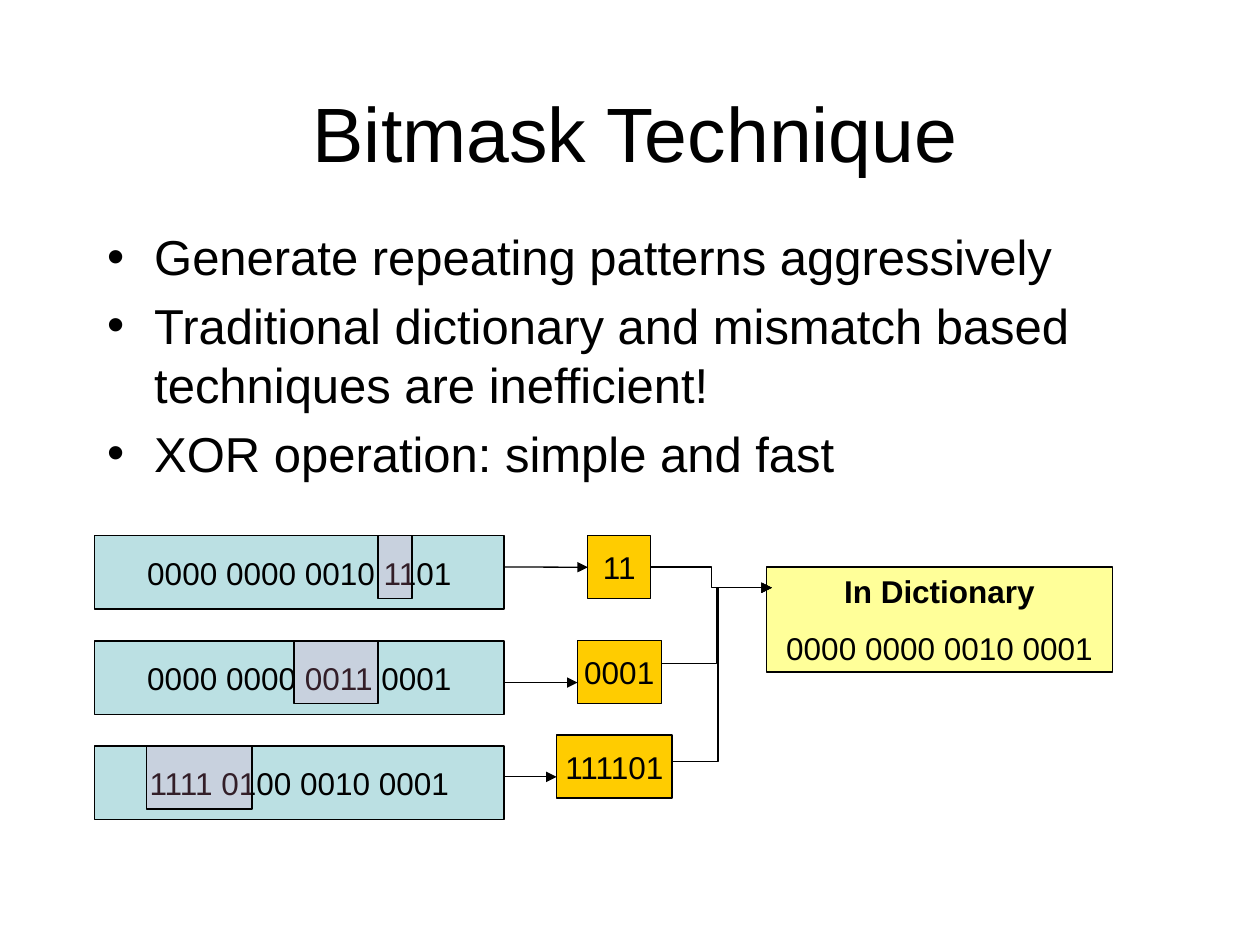
from lxml.etree import SubElement
from pptx import Presentation
from pptx.dml.color import RGBColor
from pptx.enum.shapes import MSO_CONNECTOR as Link, MSO_SHAPE as Preset
from pptx.enum.text import MSO_ANCHOR as Anchor, PP_ALIGN as Align
from pptx.oxml.ns import qn
from pptx.util import Cm, Pt

BLACK = RGBColor(0x00, 0x00, 0x00)
WORD_BLUE = RGBColor(0xBB, 0xE0, 0xE3)
MASK_PINK = RGBColor(0xFF, 0x99, 0xCC)
VALUE_GOLD = RGBColor(0xFF, 0xCC, 0x00)
DICTIONARY_YELLOW = RGBColor(0xFF, 0xFF, 0x99)

LEFT = 1.91
TOP = 10.8
ROW_PITCH = 2.12
WORD_WIDTH = 8.25
MASK_HEIGHT = 1.27
ENTRY_X, ENTRY_Y = 15.56, 11.85

BULLETS = [
    "Generate repeating patterns aggressively",
    "Traditional dictionary and mismatch based techniques are inefficient!",
    "XOR operation: simple and fast",
]

# word, mask left and width, value, value left, top and width, arrow y, exit y, bend
ROWS = [
    ("0000 0000 0010 1101", 7.62, 0.69, "11", 11.85, 10.8, 1.27, 11.43, 11.43, 50000),
    ("0000 0000 0011 0001", 5.93, 1.69, "0001", 11.64, 12.91, 1.69, 13.76, 13.38, 50000),
    ("1111 0100 0010 0001", 2.96, 2.12, "111101", 11.22, 14.82, 2.33, 15.66, 15.35, 46100),
]


def set_font(para, size, bold=False):
    para.font.name = "Arial"
    para.font.size = Pt(size)
    para.font.bold = bold
    para.font.color.rgb = BLACK


def place(shape, left, top, width, height):
    shape.left, shape.top = Cm(left), Cm(top)
    shape.width, shape.height = Cm(width), Cm(height)


def add_title(page, text):
    title = page.shapes.title
    place(title, LEFT, 0.85, 21.8, 3.6)
    title.text_frame.text = text
    title.text_frame.vertical_anchor = Anchor.MIDDLE
    para = title.text_frame.paragraphs[0]
    para.alignment = Align.CENTER
    set_font(para, 44)


def add_bullets(page, lines):
    box = page.shapes.add_textbox(Cm(LEFT), Cm(4.45), Cm(21.8), Cm(13.55))
    frame = box.text_frame
    frame.word_wrap = True
    frame.text = "\n".join(lines)
    for para in frame.paragraphs:
        set_font(para, 28)
        para.space_before = Pt(5.6)
        props = para._p.get_or_add_pPr()
        props.set("marL", str(Cm(0.95)))
        props.set("indent", str(Cm(-0.95)))
        SubElement(props, qn("a:buFont"), typeface="Arial")
        SubElement(props, qn("a:buChar"), char="•")


def add_box(page, left, top, width, height, color, text=""):
    box = page.shapes.add_shape(
        Preset.RECTANGLE, Cm(left), Cm(top), Cm(width), Cm(height))
    box.shadow.inherit = False
    box.fill.solid()
    box.fill.fore_color.rgb = color
    box.line.color.rgb = BLACK
    box.line.width = Pt(0.75)
    frame = box.text_frame
    frame.word_wrap = False
    frame.vertical_anchor = Anchor.MIDDLE
    frame.text = text
    for para in frame.paragraphs:
        para.alignment = Align.CENTER
        set_font(para, 18)
    return box


def add_mask(page, left, top, width):
    mask = add_box(page, left, top, width, MASK_HEIGHT, MASK_PINK)
    color = mask._element.spPr.find(qn("a:solidFill"))[0]
    SubElement(color, qn("a:alpha"), val="20000")


def add_dictionary(page):
    box = add_box(page, 15.45, 11.43, 6.98, 2.12, DICTIONARY_YELLOW,
                  "In Dictionary\n0000 0000 0010 0001")
    heading, entry = box.text_frame.paragraphs
    heading.font.bold = True
    entry.space_before = Pt(11)


def add_arrow(page, kind, start, end):
    arrow = page.shapes.add_connector(kind, *map(Cm, start + end))
    arrow.line.color.rgb = BLACK
    arrow.line.width = Pt(0.75)
    SubElement(arrow.line._get_or_add_ln(), qn("a:tailEnd"), type="triangle")
    SubElement(arrow._element.spPr, qn("a:effectLst"))
    return arrow


def set_bend(arrow, bend):
    guides = arrow._element.spPr.find(qn("a:prstGeom")).get_or_add_avLst()
    SubElement(guides, qn("a:gd"), name="adj1", fmla=f"val {bend}")


def add_row(page, index, row):
    (word, mask_left, mask_width, value, value_left, value_top, value_width,
     arrow_y, exit_y, bend) = row
    top = TOP + index * ROW_PITCH
    add_box(page, LEFT, top, WORD_WIDTH, 1.48, WORD_BLUE, word)
    add_mask(page, mask_left, top, mask_width)
    value_box = add_box(page, value_left, value_top, value_width, MASK_HEIGHT,
                        VALUE_GOLD, value)
    arrow = add_arrow(page, Link.STRAIGHT, (LEFT + WORD_WIDTH, arrow_y),
                      (value_left, arrow_y))
    if abs(arrow_y - value_top - MASK_HEIGHT / 2) < 0.02:
        arrow.end_connect(value_box, 1)
    elbow = add_arrow(page, Link.ELBOW, (value_left + value_width, exit_y),
                      (ENTRY_X, ENTRY_Y))
    set_bend(elbow, bend)


def main():
    deck = Presentation()
    deck.slide_width, deck.slide_height = Cm(25.4), Cm(19.05)
    page = deck.slides.add_slide(deck.slide_layouts[5])
    add_title(page, "Bitmask Technique")
    add_bullets(page, BULLETS)
    add_dictionary(page)
    for index, row in enumerate(ROWS):
        add_row(page, index, row)
    deck.save("out.pptx")


if __name__ == "__main__":
    main()
